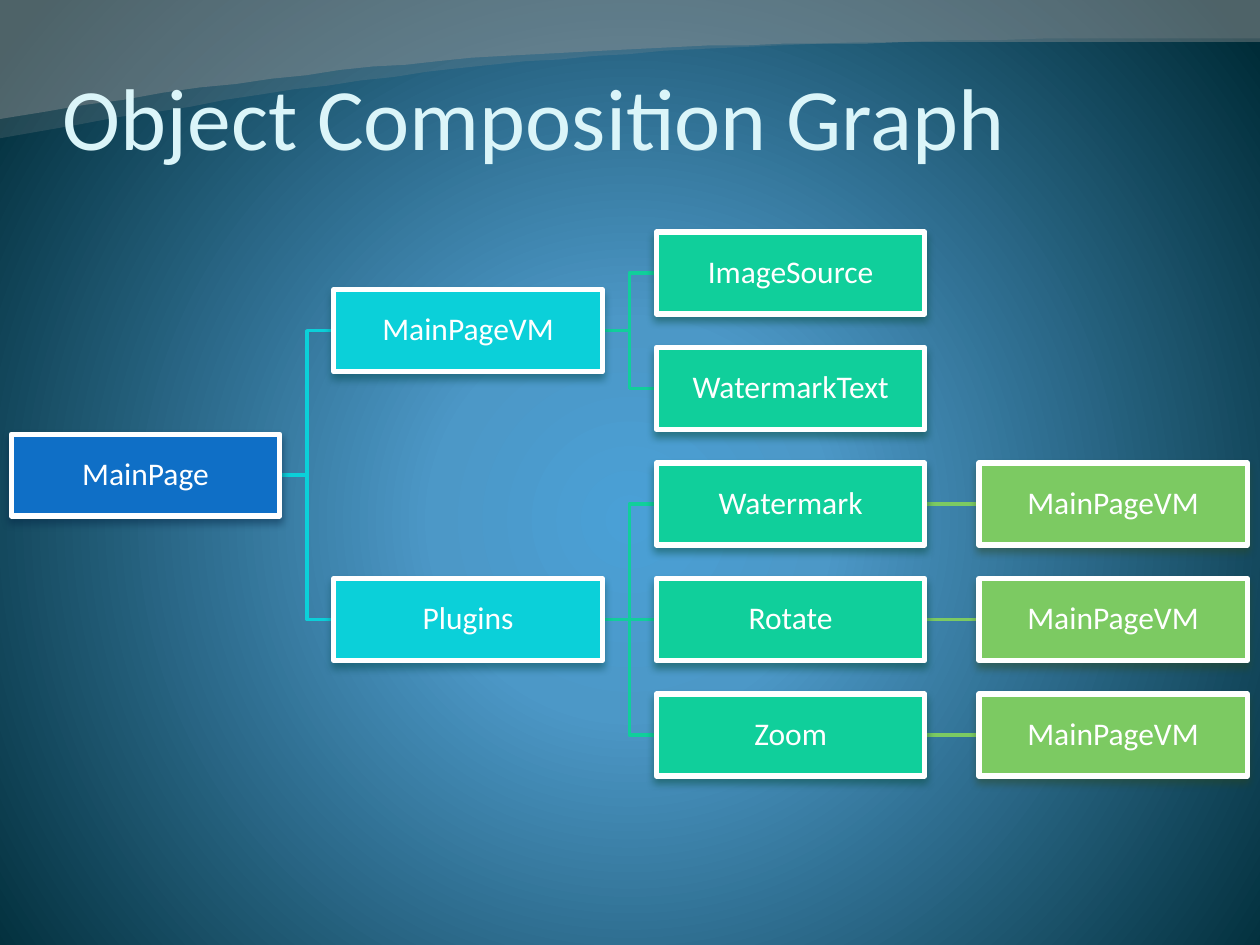
from lxml.etree import SubElement as Sub
from pptx import Presentation
from pptx.dml.color import RGBColor
from pptx.enum.shapes import MSO_CONNECTOR as Link, MSO_SHAPE as Form
from pptx.enum.text import MSO_ANCHOR as Anchor, PP_ALIGN as Align
from pptx.oxml.ns import qn
from pptx.util import Pt

WIDE, HIGH = 720, 540
LEFT, TOP = 6.5, 156
STEP, ROW = 184.3, 66
BOX_W, BOX_H = 153.4, 46.8
FILLS = ["0F6FC6", "0BD0D9", "10CF9B", "7CCA62"]
SHADES = ["042747", "024B4E", "044A37", "2B4821"]

TREE = ("MainPage", 1.75, [
    ("MainPageVM", 0.5, [
        ("ImageSource", 0, []),
        ("WatermarkText", 1, [])]),
    ("Plugins", 3, [
        ("Watermark", 2, [("MainPageVM", 2, [])]),
        ("Rotate", 3, [("MainPageVM", 3, [])]),
        ("Zoom", 4, [("MainPageVM", 4, [])])])])


def color(code):
    return RGBColor.from_string(code)


def add(node, tag, **values):
    return Sub(node, qn(tag), {key: str(val) for key, val in values.items()})


def curve(*ends, steps=32):
    for i in range(steps + 1):
        t = i / steps
        parts = ((1 - t) ** 3, 3 * t * (1 - t) ** 2, 3 * t * t * (1 - t), t ** 3)
        yield tuple(sum(k * p[axis] for k, p in zip(parts, ends)) for axis in (0, 1))


class Deck:
    font = "Calibri"

    def __init__(self):
        self.show = Presentation()
        self.show.slide_width, self.show.slide_height = Pt(WIDE), Pt(HIGH)
        self.slide = self.show.slides.add_slide(self.show.slide_layouts[6])
        self.shapes = self.slide.shapes

    def back(self, stops, focus):
        self.slide.background.fill.gradient()
        grad = self.slide.element.find(".//" + qn("a:gradFill"))
        for child in list(grad):
            grad.remove(child)
        listing = add(grad, "a:gsLst")
        for pos, code in stops:
            stop = add(listing, "a:gs", pos=pos * 1000)
            add(stop, "a:srgbClr", val=code)
        ring = add(grad, "a:path", path="circle")
        add(ring, "a:fillToRect", **{k: v * 1000 for k, v in focus.items()})

    def wave(self, points, code, alpha):
        pen = self.shapes.build_freeform(0, 0, scale=Pt(1))
        pen.add_line_segments(points, close=True)
        shape = pen.convert_to_shape()
        shape.shadow.inherit = False
        shape.line.fill.background()
        shape.fill.solid()
        shape.fill.fore_color.rgb = color(code)
        tint = shape.element.spPr.find(".//" + qn("a:srgbClr"))
        add(tint, "a:alpha", val=alpha * 1000)

    def label(self, shape, text, size, code, inset, anchor, style):
        frame = shape.text_frame
        frame.word_wrap = True
        for side, gap in zip(("left", "top", "right", "bottom"), inset):
            setattr(frame, "margin_" + side, Pt(gap))
        frame.vertical_anchor = anchor
        para = frame.paragraphs[0]
        for key, val in style.items():
            setattr(para, key, val)
        run = para.add_run()
        run.text = text
        for key, val in {"name": self.font, "size": Pt(size)}.items():
            setattr(run.font, key, val)
        run.font.color.rgb = color(code)

    def title(self, text, *area):
        shape = self.shapes.add_textbox(*map(Pt, area))
        self.label(shape, text, 50, "DBF5F9", (0, 3.6, 0, 0), Anchor.BOTTOM,
                   {"alignment": Align.LEFT})

    def box(self, text, x, y, fill, shade):
        shape = self.shapes.add_shape(Form.RECTANGLE, Pt(x), Pt(y), Pt(BOX_W), Pt(BOX_H))
        shape.fill.solid()
        shape.fill.fore_color.rgb = color(fill)
        shape.line.color.rgb = color("FFFFFF")
        shape.line.width = Pt(3)
        shape.shadow.inherit = False
        glow = add(shape.element.spPr.find(qn("a:effectLst")), "a:outerShdw",
                   blurRad=Pt(4.5), dist=Pt(3), dir=90 * 60000, rotWithShape=0)
        tint = add(glow, "a:srgbClr", val=shade)
        add(tint, "a:alpha", val=48000)
        self.label(shape, text, 18, "FFFFFF", (0.7,) * 4, Anchor.MIDDLE,
                   {"alignment": Align.CENTER, "line_spacing": 0.9})

    def link(self, x1, y1, x2, y2, code):
        kind = Link.STRAIGHT if y1 == y2 else Link.ELBOW
        wire = self.shapes.add_connector(kind, *map(Pt, (x1, y1, x2, y2)))
        wire.line.color.rgb = color(code)
        wire.line.width = Pt(2)
        add(wire.element.spPr, "a:effectLst")

    def links(self, node, level=0):
        _, row, kids = node
        x = LEFT + level * STEP
        for kid in kids:
            self.link(x + BOX_W, TOP + row * ROW, x + STEP, TOP + kid[1] * ROW,
                      FILLS[level + 1])
            self.links(kid, level + 1)

    def boxes(self, node, level=0):
        text, row, kids = node
        self.box(text, LEFT + level * STEP, TOP + row * ROW - BOX_H / 2,
                 FILLS[level], SHADES[level])
        for kid in kids:
            self.boxes(kid, level + 1)


def main():
    deck = Deck()
    deck.back([(0, "4AA0D6"), (25, "4C98C7"), (100, "002C38")],
              {"l": 10, "t": 110, "r": 10, "b": 100})
    low = curve((WIDE, 21.6), (360, 21.6), (252, 34.6), (0, 79.2))
    high = curve((WIDE, 23.8), (360, 23.8), (267, 24.5), (0, 67.7))
    for edge, alpha in ((low, 20), (high, 40)):
        deck.wave([(WIDE, 0), *edge], "969696", alpha)
    deck.title("Object Composition Graph", 36, 5.8, 648, 90)
    deck.links(TREE)
    deck.boxes(TREE)
    deck.show.save("out.pptx")


if __name__ == "__main__":
    main()
